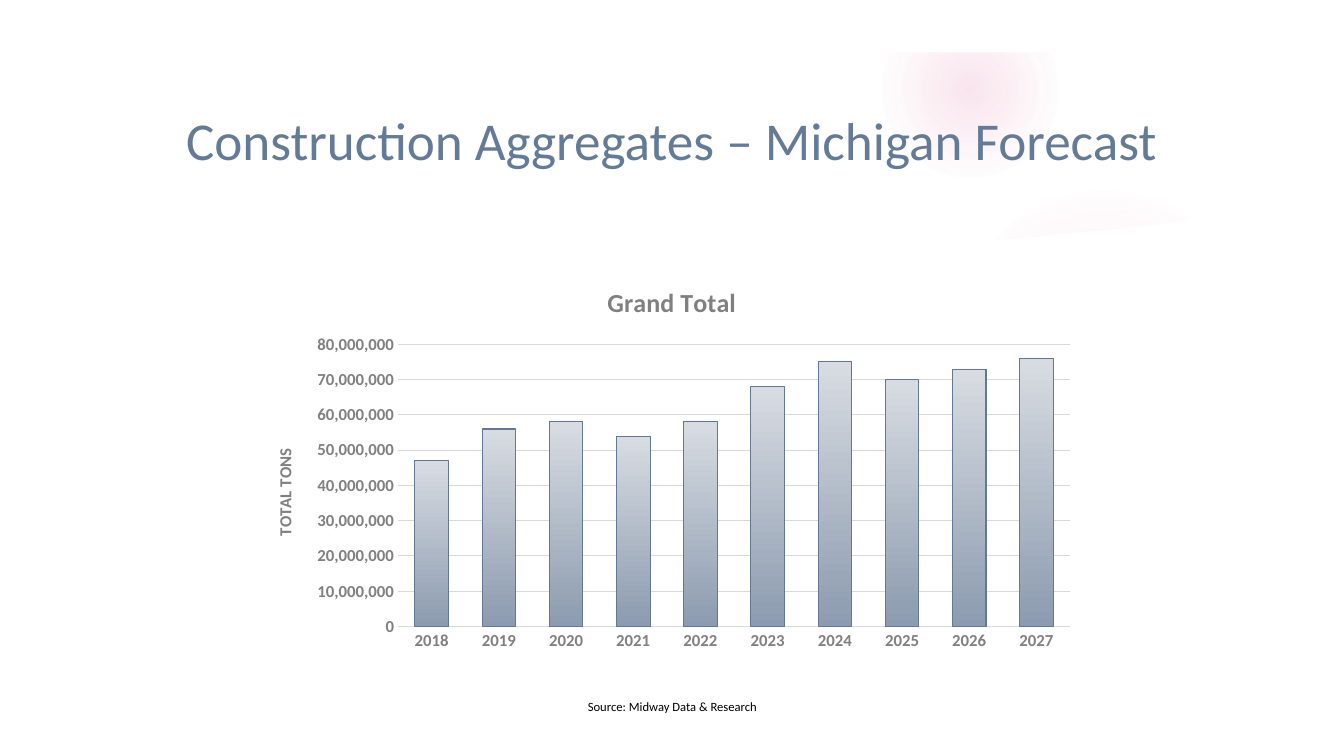
from lxml import etree
from pptx import Presentation
from pptx.chart.data import CategoryChartData
from pptx.dml.color import RGBColor
from pptx.enum import chart as ch, shapes, text
from pptx.oxml import ns, parse_xml
from pptx.util import Pt

TITLE = "Construction Aggregates – Michigan Forecast"
SOURCE = "Source: Midway Data & Research"
SERIES = "Grand Total"
AXIS_TITLE = "TOTAL TONS"
FIRST_YEAR = 2018
MILLION_TONS = [47, 56, 58, 54, 58, 68, 75, 70, 73, 76]

FONT = "Calibri"
WHITE = RGBColor(0xFF, 0xFF, 0xFF)
BLACK = RGBColor(0, 0, 0)
PINK = RGBColor(0xD6, 0x47, 0x87)
SLATE = RGBColor(0x64, 0x7B, 0x98)
GRAY = RGBColor(0x80, 0x80, 0x80)
GRID = RGBColor(0xD9, 0xD9, 0xD9)
BAR_TOP = RGBColor(0xD8, 0xDC, 0xE2)
BAR_BOTTOM = RGBColor(0x8C, 0x9B, 0xAF)
BAR_EDGE = RGBColor(0x62, 0x78, 0x95)

W, H, MARGIN = 960, 540, 37.5
# left, top, diameter, (position %, opacity %) stops
GLOWS = [
    (677.5, 131.8, 221.8, [(0, 7), (36, 6), (69, 0)]),
    (630, 0.7, 126, [(0, 14), (36, 7), (73, 0)]),
]
SWOOSH = [(670, 175), (734, 165.6), (798, 154), (857, 139.7), (924, 119.5),
          (928, 154), (866, 163), (792, 173), (672.5, 180)]
PANEL = [(924, 147), (864, 156), (803, 163), (743, 169), (683, 173.5),
         (624, 176.4), (547, 178), (473, 178.6), (384, 176.4), (320, 173.5),
         (204, 165.6), (114, 156.5), (36, 147), (36, 504), (924, 504)]
CHART_BOX = (183.6, 190, 592.6, 280)
PLOT_LAYOUT = {"x": 0.17, "y": 0.2, "w": 0.81, "h": 0.72}
TITLE_BOX = (118, 72, 723.6, 55.4)
SOURCE_BOX = (403.2, 496, 154, 18)


def points(values):
    return [Pt(v) for v in values]


def style_font(font, size, color, bold=False):
    font.name, font.size, font.bold = FONT, Pt(size), bold
    font.color.rgb = color


def write(tf, words, size, color, bold=False, anchor=None):
    tf.word_wrap = True
    if anchor is not None:
        tf.vertical_anchor = anchor
    p = tf.paragraphs[0]
    p.alignment = text.PP_ALIGN.CENTER
    r = p.add_run()
    r.text = words
    style_font(r.font, size, color, bold)


def plain(sp, color):
    sp.shadow.inherit = False
    sp.fill.solid()
    sp.fill.fore_color.rgb = color
    sp.line.fill.background()
    return sp


def add_glow(s, left, top, size, stops):
    sp = plain(s.shapes.add_shape(shapes.MSO_SHAPE.OVAL, *points((left, top, size, size))), PINK)
    gs = "".join(f'<a:gs pos="{pos * 1000}"><a:srgbClr val="{PINK}">'
                 f'<a:alpha val="{alpha * 1000}"/></a:srgbClr></a:gs>' for pos, alpha in stops)
    grad = parse_xml(f'<a:gradFill {ns.nsdecls("a")}><a:gsLst>{gs}</a:gsLst><a:path path="circle">'
                     '<a:fillToRect l="50000" t="50000" r="50000" b="50000"/></a:path></a:gradFill>')
    solid = sp._element.spPr.find(ns.qn("a:solidFill"))
    solid.getparent().replace(solid, grad)


def add_outline(s, corners, opacity=100):
    builder = s.shapes.build_freeform(*corners[0], scale=Pt(1))
    builder.add_line_segments(corners[1:], close=True)
    sp = plain(builder.convert_to_shape(), WHITE)
    if opacity < 100:
        color = sp._element.spPr.find(ns.qn("a:solidFill"))[0]
        etree.SubElement(color, ns.qn("a:alpha")).set("val", str(opacity * 1000))


def add_backdrop(s):
    for glow in GLOWS:
        add_glow(s, *glow)
    add_outline(s, SWOOSH, opacity=20)
    add_outline(s, PANEL)
    frame = plain(s.shapes.add_shape(shapes.MSO_SHAPE.FRAME, *points((0, 0, W, H))), WHITE)
    frame.adjustments[0] = MARGIN / H


def place_plot(chart):
    """Fix the inner plot area as fractions of the chart frame."""
    area = chart._chartSpace.chart.plotArea
    for old in area.findall(ns.qn("c:layout")):
        area.remove(old)
    sizes = "".join(f'<c:{k} val="{v}"/>' for k, v in PLOT_LAYOUT.items())
    area.insert(0, parse_xml(
        f'<c:layout {ns.nsdecls("c")}><c:manualLayout><c:layoutTarget val="inner"/>'
        f'<c:xMode val="edge"/><c:yMode val="edge"/>{sizes}</c:manualLayout></c:layout>'))


def add_forecast(s):
    data = CategoryChartData(number_format="#,##0")
    data.categories = [str(FIRST_YEAR + i) for i in range(len(MILLION_TONS))]
    data.add_series(SERIES, [v * 1_000_000 for v in MILLION_TONS])
    chart = s.shapes.add_chart(ch.XL_CHART_TYPE.COLUMN_CLUSTERED, *points(CHART_BOX), data).chart
    chart.has_legend = False
    style_font(chart.font, 10, BLACK, True)
    write(chart.chart_title.text_frame, SERIES, 18.6, GRAY, True)
    place_plot(chart)

    years, tons = chart.category_axis, chart.value_axis
    for axis in (years, tons):
        axis.major_tick_mark = axis.minor_tick_mark = ch.XL_TICK_MARK.NONE
        style_font(axis.tick_labels.font, 12, GRAY, True)
    tons.minimum_scale, tons.maximum_scale, tons.major_unit = 0, 80_000_000, 10_000_000
    tons.tick_labels.number_format = "#,##0"
    tons.tick_labels.number_format_is_linked = False
    tons.format.line.fill.background()
    write(tons.axis_title.text_frame, AXIS_TITLE, 12, GRAY, True)
    for line in (years.format.line, tons.major_gridlines.format.line):
        line.color.rgb, line.width = GRID, Pt(0.75)

    plot = chart.plots[0]
    plot.gap_width, plot.overlap, plot.vary_by_categories = 100, -24, False
    bars = plot.series[0].format
    bars.fill.gradient()
    bars.fill.gradient_angle = 270
    for stop, position, color in zip(bars.fill.gradient_stops, (0, 1), (BAR_TOP, BAR_BOTTOM)):
        stop.position, stop.color.rgb = position, color
    bars.line.color.rgb, bars.line.width = BAR_EDGE, Pt(0.75)


def main():
    prs = Presentation()
    prs.slide_width, prs.slide_height = Pt(W), Pt(H)
    s = prs.slides.add_slide(prs.slide_layouts[5])
    add_backdrop(s)
    add_forecast(s)

    title = s.shapes.title
    title.left, title.top, title.width, title.height = points(TITLE_BOX)
    write(title.text_frame, TITLE, 38, SLATE, anchor=text.MSO_ANCHOR.MIDDLE)
    s.shapes._spTree.append(title._element)  # bring in front of the backdrop

    source = s.shapes.add_textbox(*points(SOURCE_BOX))
    write(source.text_frame, SOURCE, 9, BLACK)
    prs.save("out.pptx")


if __name__ == "__main__":
    main()
